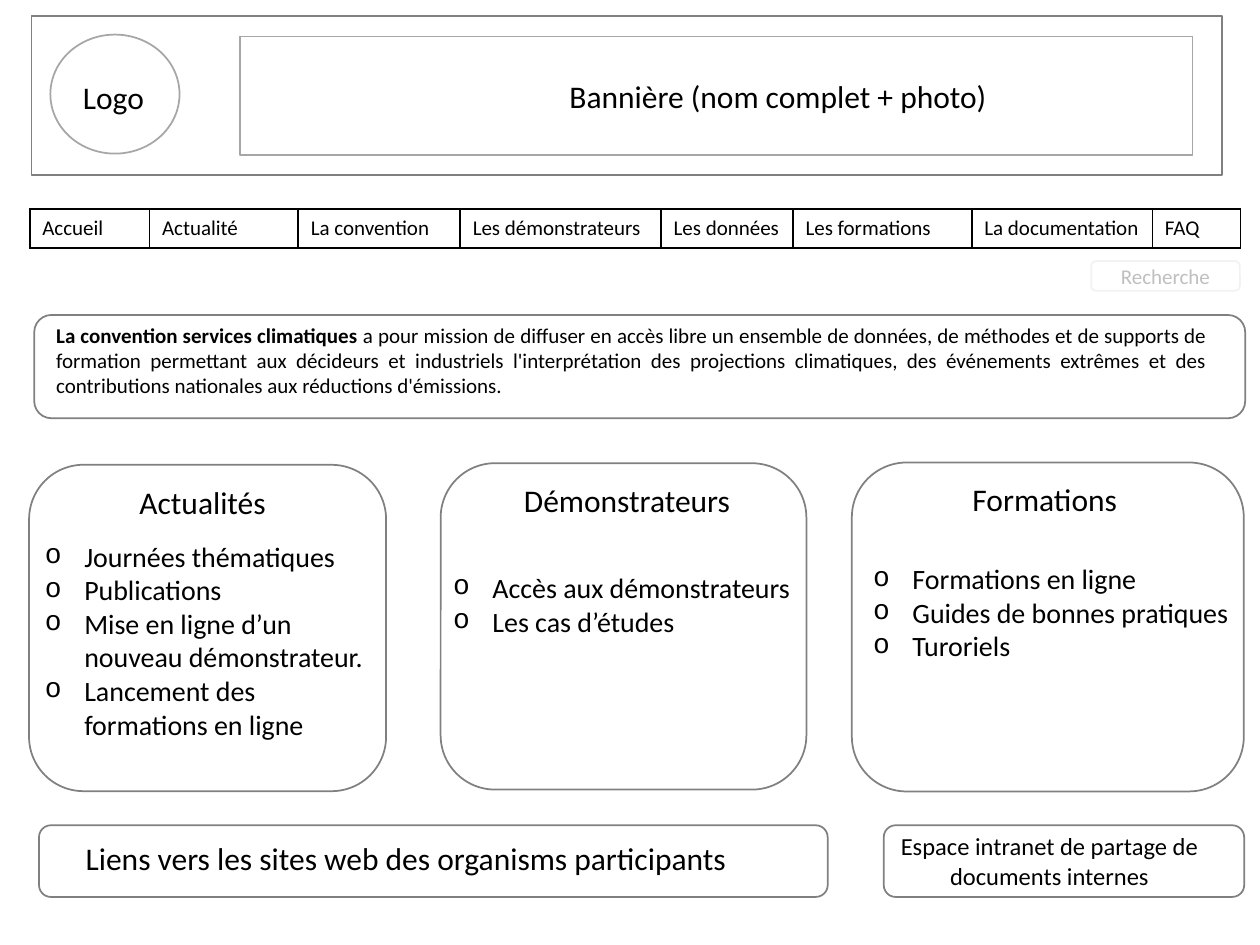
from dataclasses import dataclass
from lxml.etree import SubElement
from pptx import Presentation
from pptx.dml.color import RGBColor
from pptx.enum.shapes import MSO_SHAPE
from pptx.enum.text import MSO_ANCHOR, PP_ALIGN
from pptx.oxml.ns import qn
from pptx.util import Pt


@dataclass(frozen=True)
class Theme:
    """Hold the colours, type sizes and line width of the page."""
    font: str = "Calibri"
    mark: str = "Courier New"
    ink: str = "000000"
    paper: str = "FFFFFF"
    edge: str = "808080"
    soft: str = "A6A6A6"
    pale: str = "F2F2F2"
    hint: str = "BFBFBF"
    title: int = 18
    list: int = 16
    note: int = 14
    body: int = 12
    line: int = 1


THEME = Theme()


def apply(item, values):
    """Set each named value on the item."""
    for name, value in values.items():
        setattr(item, name, value)


def shift(box, left, top, width, height):
    """Return a box placed relative to the corner of another."""
    return box[0] + left, box[1] + top, width, height


def write(para, text, size, color=THEME.ink, bold=False):
    """Add one styled run to a paragraph."""
    run = para.add_run()
    run.text = text
    apply(run.font, {"name": THEME.font, "size": Pt(size), "bold": bold})
    run.font.color.rgb = RGBColor.from_string(color)


def frame(slide, kind, box, color=THEME.edge, fill=None):
    """Draw an outlined shape."""
    shape = slide.shapes.add_shape(kind, *map(Pt, box))
    shape.shadow.inherit = False
    if fill:
        shape.fill.solid()
        shape.fill.fore_color.rgb = RGBColor.from_string(fill)
    else:
        shape.fill.background()
    shape.line.width = Pt(THEME.line)
    shape.line.color.rgb = RGBColor.from_string(color)
    return shape


def text(slide, box, wrap=True, align=PP_ALIGN.LEFT):
    """Add a text box and return its first paragraph."""
    area = slide.shapes.add_textbox(*map(Pt, box)).text_frame
    area.word_wrap = wrap
    para = area.paragraphs[0]
    para.alignment = align
    return para


def label(slide, box, words):
    """Add a one-line title."""
    write(text(slide, box, wrap=False), words, THEME.title)


def bullet(para):
    """Give a paragraph a hanging round bullet."""
    props = para._p.get_or_add_pPr()
    props.set("marL", str(Pt(22.5)))
    props.set("indent", str(Pt(-22.5)))
    SubElement(props, qn("a:buFont")).set("typeface", THEME.mark)
    SubElement(props, qn("a:buChar")).set("char", "o")


def header(slide, box):
    """Place the logo and the banner in their frame."""
    frame(slide, MSO_SHAPE.RECTANGLE, box, fill=THEME.paper)
    frame(slide, MSO_SHAPE.OVAL, shift(box, 10.8, 10.6, 73.8, 68), THEME.soft)
    label(slide, shift(box, 22.3, 31.8, 49.7, 29), "Logo")
    frame(slide, MSO_SHAPE.RECTANGLE, shift(box, 119, 11.6, 544.5, 68),
          THEME.soft)
    label(slide, shift(box, 300.3, 31, 253.4, 29),
          "Bannière (nom complet + photo)")


def border(cell):
    """Rule all four sides of a cell."""
    props = cell._tc.get_or_add_tcPr()
    for side in "LRTB":
        line = SubElement(props, qn(f"a:ln{side}"), w=str(Pt(THEME.line)))
        fill = SubElement(line, qn("a:solidFill"))
        SubElement(fill, qn("a:srgbClr"), val=THEME.ink)


def menu(slide, box, items):
    """Place the menu as a one-row table."""
    table = slide.shapes.add_table(1, len(items), *map(Pt, box)).table
    apply(table, {"first_row": False, "horz_banding": False})
    for col, cell, (words, width) in zip(table.columns, table.rows[0].cells,
                                         items):
        col.width = Pt(width)
        border(cell)
        cell.fill.background()
        write(cell.text_frame.paragraphs[0], words, THEME.body)


def search(slide, box):
    """Place the search field."""
    area = frame(slide, MSO_SHAPE.ROUNDED_RECTANGLE, box,
                 THEME.pale).text_frame
    area.vertical_anchor = MSO_ANCHOR.MIDDLE
    para = area.paragraphs[0]
    para.alignment = PP_ALIGN.CENTER
    write(para, "Recherche", THEME.body, THEME.hint)


def mission(slide, box):
    """Place the mission statement."""
    frame(slide, MSO_SHAPE.ROUNDED_RECTANGLE, box)
    para = text(slide, shift(box, 5.4, 0.7, 672, 51), align=PP_ALIGN.JUSTIFY)
    write(para, "La convention services climatiques ", THEME.body, bold=True)
    write(para, "a pour mission de diffuser en accès libre un ensemble de "
          "données, de méthodes et de supports de formation permettant aux "
          "décideurs et industriels l'interprétation des projections "
          "climatiques, des événements extrêmes et des contributions "
          "nationales aux réductions d'émissions.", THEME.body)


def panel(slide, box, title, head, items, body):
    """Place a titled panel with its bullet list."""
    frame(slide, MSO_SHAPE.ROUNDED_RECTANGLE, box)
    para = text(slide, shift(box, *body))
    for index, words in enumerate(items):
        if index:
            para = para._parent.add_paragraph()
        bullet(para)
        write(para, words, THEME.list)
    label(slide, shift(box, *head), title)


def links(slide, box):
    """Place the links bar."""
    label(slide, shift(box, 19.6, 4.3, 385, 29),
          "Liens vers les sites web des organisms participants")
    frame(slide, MSO_SHAPE.ROUNDED_RECTANGLE, box)


def private(slide, box):
    """Place the intranet box."""
    para = text(slide, shift(box, -5.8, 0, 201, 41), align=PP_ALIGN.CENTER)
    write(para, "Espace intranet de partage de documents internes", THEME.note)
    frame(slide, MSO_SHAPE.ROUNDED_RECTANGLE, box)


def main():
    """Build the page and save it."""
    deck = Presentation()
    apply(deck, {"slide_width": Pt(720), "slide_height": Pt(540)})
    slide = deck.slides.add_slide(deck.slide_layouts[6])
    header(slide, (18, 9.2, 680.4, 91))
    menu(slide, (17, 119.5, 692, 22.3), (
        ("Accueil", 68.4), ("Actualité", 85), ("La convention", 92.6),
        ("Les démonstrateurs", 114.8), ("Les données", 75.4),
        ("Les formations", 102.2), ("La documentation", 103.2),
        ("FAQ", 50.4)))
    search(slide, (623.5, 149.2, 85, 17))
    mission(slide, (19.6, 180, 692, 59))
    panel(slide, (16.6, 265.6, 204, 186.5), "Actualités",
          (56, 6.8, 87, 29),
          ("Journées thématiques", "Publications",
           "Mise en ligne d’un nouveau démonstrateur.",
           "Lancement des formations en ligne"), (2, 39, 201.6, 124))
    panel(slide, (251.8, 264.7, 209, 186.5), "Démonstrateurs",
          (40.5, 6.8, 134, 29),
          ("Accès aux démonstrateurs", "Les cas d’études"),
          (0, 57.8, 209, 65.5))
    panel(slide, (486.8, 264.3, 224, 188), "Formations",
          (61.8, 6.4, 98, 29),
          ("Formations en ligne", "Guides de bonnes pratiques", "Turoriels"),
          (5, 53.2, 218.2, 85))
    links(slide, (22.3, 471.6, 450.7, 41))
    private(slide, (505, 471.6, 206, 41))
    deck.save("out.pptx")


if __name__ == "__main__":
    main()
